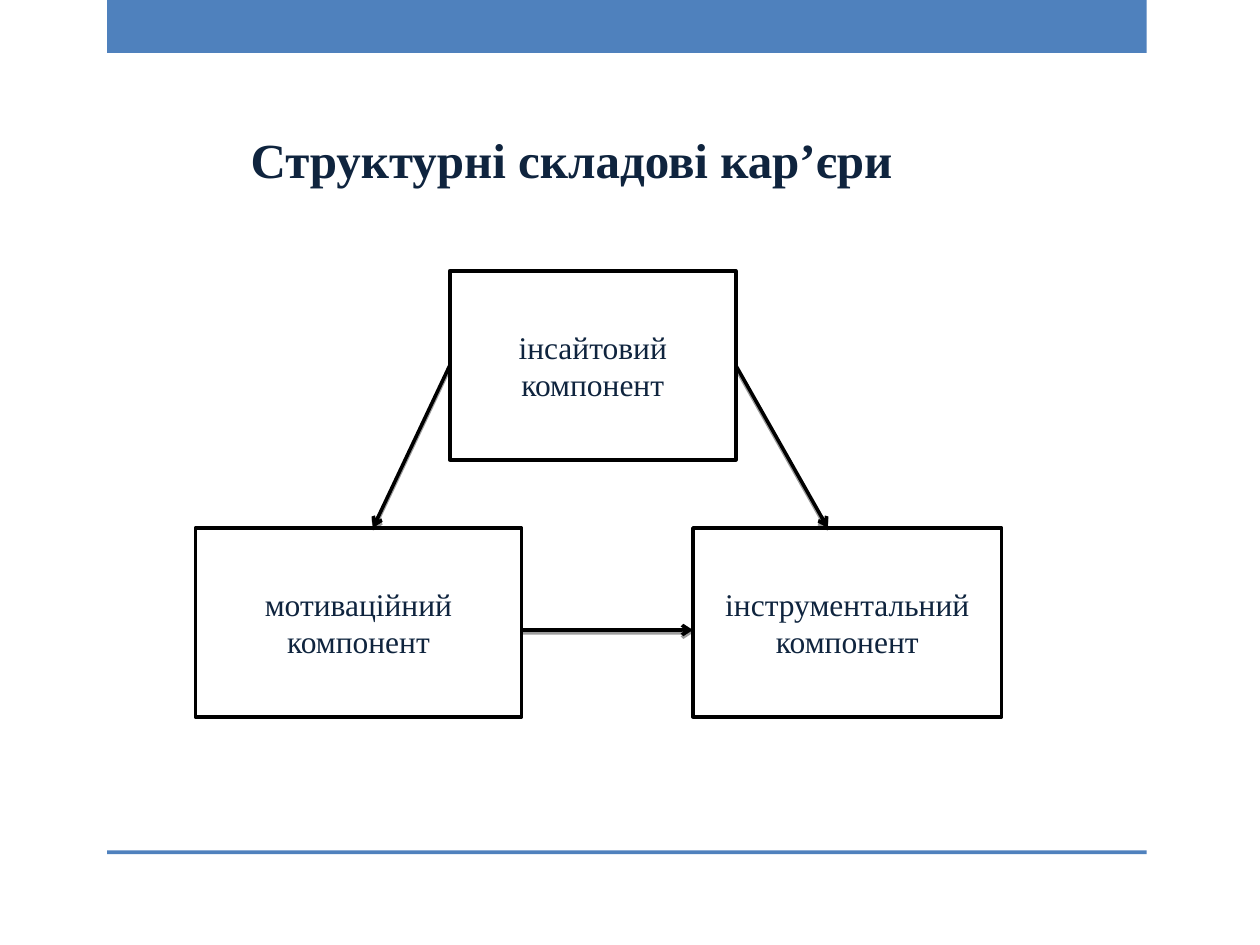
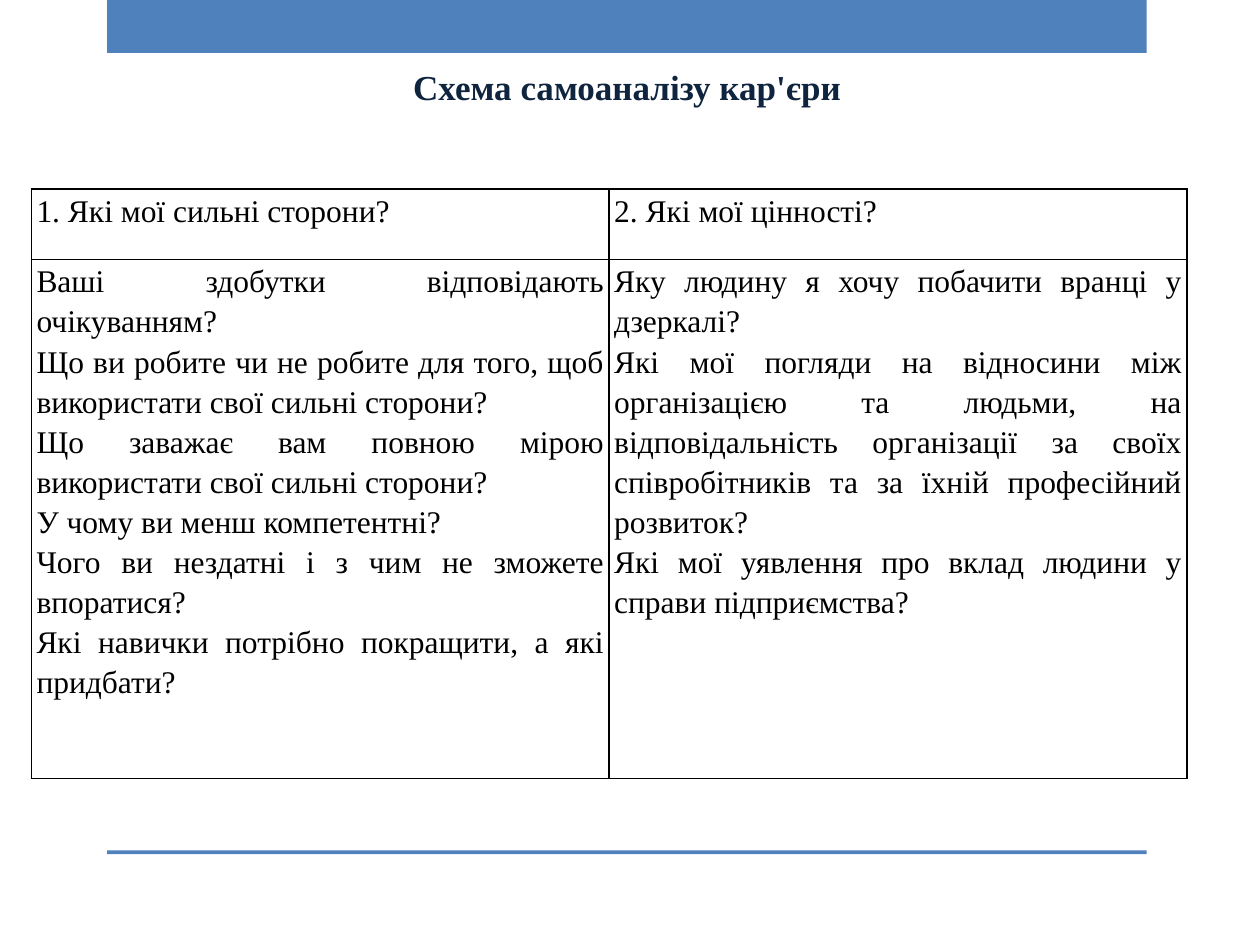
from dataclasses import dataclass

from lxml.etree import SubElement
from pptx import Presentation
from pptx.dml.color import RGBColor
from pptx.enum.shapes import MSO_CONNECTOR, MSO_SHAPE
from pptx.enum.text import MSO_ANCHOR, MSO_AUTO_SIZE, PP_ALIGN
from pptx.oxml import parse_xml
from pptx.oxml.ns import nsdecls, qn
from pptx.util import Inches, Pt


@dataclass(frozen=True)
class Theme:
    font: str = "Times New Roman"
    band: RGBColor = RGBColor(0x4F, 0x81, 0xBD)
    navy: RGBColor = RGBColor(0x0F, 0x24, 0x3E)
    black: RGBColor = RGBColor(0, 0, 0)
    white: RGBColor = RGBColor(255, 255, 255)
    body_size: int = 18
    diagram_line: int = 2
    table_line: int = 1


THEME = Theme()

QUESTIONS = [
    [["1. Які мої сильні сторони?"], ["2. Які мої цінності?"]],
    [
        [
            "Ваші здобутки відповідають очікуванням?",
            "Що ви робите чи не робите для того, щоб використати свої сильні сторони?",
            "Що заважає вам повною мірою використати свої сильні сторони?",
            "У чому ви менш компетентні?",
            "Чого ви нездатні і з чим не зможете впоратися?",
            "Які навички потрібно покращити, а які придбати?",
        ],
        [
            "Яку людину я хочу побачити вранці у дзеркалі?",
            "Які мої погляди на відносини між організацією та людьми, на "
            "відповідальність організації за своїх співробітників та за "
            "їхній професійний розвиток?",
            "Які мої уявлення про вклад людини у справи підприємства?",
        ],
    ],
]


def write_text(frame, *lines, size=THEME.body_size, color=THEME.navy, bold=False,
               align=PP_ALIGN.LEFT, spacing=None):
    for index, line in enumerate(lines):
        paragraph = frame.add_paragraph() if index else frame.paragraphs[0]
        paragraph.text = line
        paragraph.alignment = align
        paragraph.line_spacing = spacing
        font = paragraph.font
        font.name, font.size, font.bold = THEME.font, Pt(size), bold
        font.color.rgb = color


def add_rectangle(slide, left, top, width, height, fill, outline=None):
    rectangle = slide.shapes.add_shape(
        MSO_SHAPE.RECTANGLE, Inches(left), Inches(top), Inches(width), Inches(height))
    rectangle.shadow.inherit = False
    rectangle.fill.solid()
    rectangle.fill.fore_color.rgb = fill
    if outline is None:
        rectangle.line.fill.background()
    else:
        rectangle.line.color.rgb = outline
        rectangle.line.width = Pt(THEME.diagram_line)
    return rectangle


def add_banded_slide(deck):
    slide = deck.slides.add_slide(deck.slide_layouts[6])
    for top, height in ((0, 0.42), (6.75, 0.03)):
        add_rectangle(slide, 0.85, top, 8.25, height, THEME.band)
    return slide


def add_title(slide, text, left, top, width, height, size):
    title = slide.shapes.add_textbox(
        Inches(left), Inches(top), Inches(width), Inches(height))
    title.text_frame.word_wrap = False
    title.text_frame.auto_size = MSO_AUTO_SIZE.SHAPE_TO_FIT_TEXT
    write_text(title.text_frame, text, size=size, bold=True)


def add_component(slide, text, left, top, width):
    component = add_rectangle(slide, left, top, width, 1.5, THEME.white, THEME.black)
    component.text_frame.word_wrap = True
    component.text_frame.vertical_anchor = MSO_ANCHOR.MIDDLE
    write_text(component.text_frame, text, align=PP_ALIGN.CENTER)
    return component


def add_arrow(slide, start, end):
    arrow = slide.shapes.add_connector(
        MSO_CONNECTOR.STRAIGHT, *(Inches(value) for value in (*start, *end)))
    arrow.line.color.rgb = THEME.black
    arrow.line.width = Pt(THEME.diagram_line)
    SubElement(arrow.line._get_or_add_ln(), qn("a:tailEnd"), type="arrow")
    arrow._element.spPr.append(parse_xml(
        f'<a:effectLst {nsdecls("a")}>'
        f'<a:outerShdw blurRad="0" dist="{Pt(1.6)}" dir="5400000" rotWithShape="0">'
        f'<a:srgbClr val="{THEME.black}"><a:alpha val="38000"/></a:srgbClr>'
        '</a:outerShdw></a:effectLst>'))
    return arrow


def format_cell(cell):
    cell.margin_left = cell.margin_right = Inches(0.04)
    cell.margin_top = cell.margin_bottom = 0
    properties = cell._tc.get_or_add_tcPr()
    for side in ("lnL", "lnR", "lnT", "lnB"):
        border = SubElement(properties, qn(f"a:{side}"), w=str(Pt(THEME.table_line)))
        fill = SubElement(border, qn("a:solidFill"))
        SubElement(fill, qn("a:srgbClr"), val=str(THEME.black))
    cell.fill.background()


def add_question_table(slide, rows, left, top, width, heights):
    table = slide.shapes.add_table(
        len(rows), len(rows[0]), Inches(left), Inches(top),
        Inches(width), Inches(sum(heights))).table
    table.first_row = table.horz_banding = False
    for row, height in zip(table.rows, heights):
        row.height = Inches(height)
    for row, contents in zip(table.rows, rows):
        for cell, lines in zip(row.cells, contents):
            format_cell(cell)
            write_text(cell.text_frame, *lines, color=THEME.black,
                       align=PP_ALIGN.JUSTIFY, spacing=1.15)


def build_components_slide(deck):
    slide = add_banded_slide(deck)
    lower_top = 4.19
    insight = add_component(slide, "інсайтовий компонент", 3.57, 2.15, 2.27)
    add_component(slide, "мотиваційний компонент", 1.55, lower_top, 2.59)
    add_component(slide, "інструментальний компонент", 5.5, lower_top, 2.45)
    to_motivation = add_arrow(slide, (3.57, 2.9), (2.96, lower_top))
    to_motivation.begin_connect(insight, 1)
    to_instruments = add_arrow(slide, (5.84, 2.9), (6.57, lower_top))
    to_instruments.begin_connect(insight, 3)
    add_arrow(slide, (4.14, 5), (5.5, 5))
    add_title(slide, "Структурні складові кар’єри", 1.89, 0.98, 5.45, 0.57, 28)


def build_analysis_slide(deck):
    slide = add_banded_slide(deck)
    add_title(slide, "Схема самоаналізу кар'єри", 3.18, 0.47, 3.69, 0.44, 20)
    add_question_table(slide, QUESTIONS, 0.25, 1.5, 9.17, (0.56, 4.12))


def main():
    deck = Presentation()
    deck.slide_width, deck.slide_height = Inches(10), Inches(7.5)
    build_components_slide(deck)
    build_analysis_slide(deck)
    deck.save("out.pptx")


if __name__ == "__main__":
    main()
